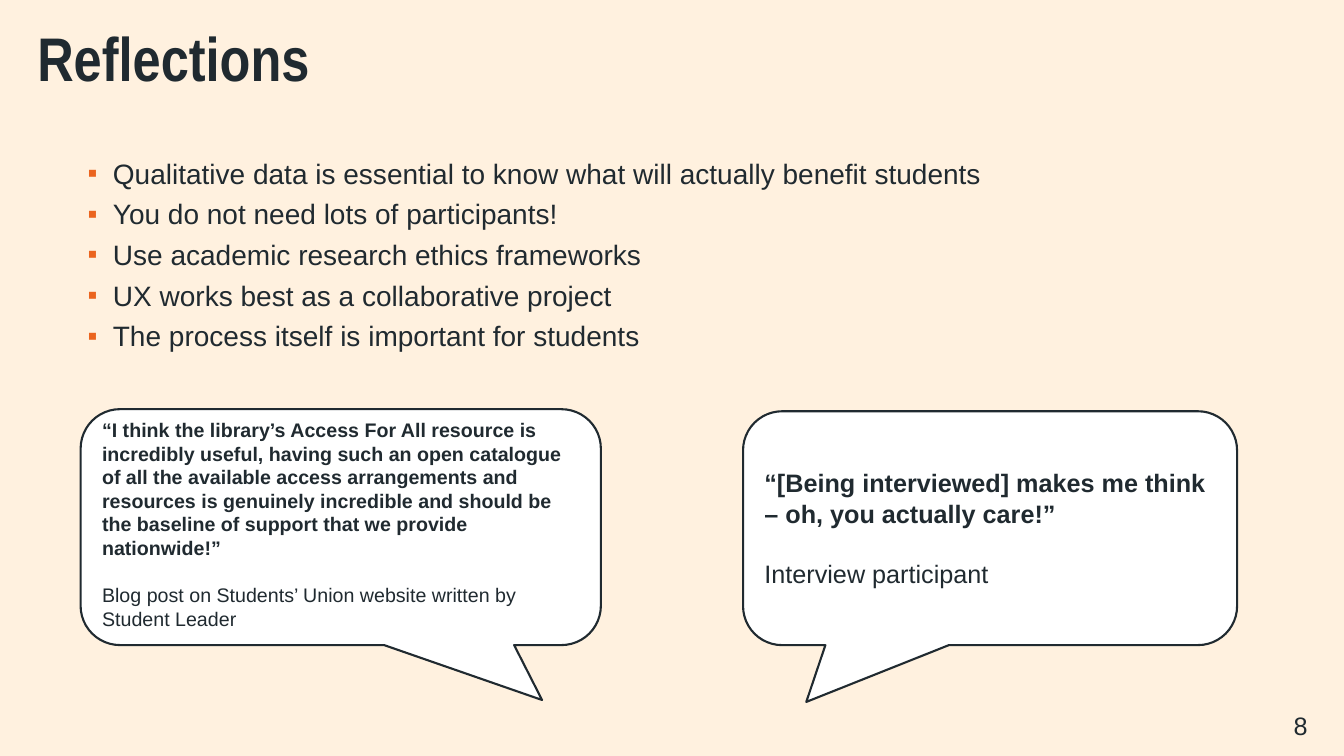
from lxml import etree
from pptx import Presentation
from pptx.dml.color import RGBColor
from pptx.enum.shapes import MSO_SHAPE
from pptx.enum.text import MSO_ANCHOR, PP_ALIGN
from pptx.oxml.ns import qn
from pptx.util import Inches, Pt

CALLOUT = MSO_SHAPE.ROUNDED_RECTANGULAR_CALLOUT
MIDDLE = MSO_ANCHOR.MIDDLE
LEFT, RIGHT = PP_ALIGN.LEFT, PP_ALIGN.RIGHT

CREAM = RGBColor(0xFF, 0xF1, 0xDF)
INK = RGBColor(0x20, 0x2A, 0x30)
WHITE = RGBColor(0xFF, 0xFF, 0xFF)
ORANGE = RGBColor(0xEB, 0x64, 0x1E)

prs = Presentation()
prs.slide_width = Inches(13.33)
prs.slide_height = Inches(7.5)
slide = prs.slides.add_slide(prs.slide_layouts[6])
slide.background.fill.solid()
slide.background.fill.fore_color.rgb = CREAM


def add_frame(left, top, width, height):
    box = slide.shapes.add_textbox(Inches(left), Inches(top), Inches(width), Inches(height))
    frame = box.text_frame
    frame.word_wrap = True
    frame.margin_left = frame.margin_right = frame.margin_top = frame.margin_bottom = 0
    return frame


def add_run(paragraph, text, size, bold=False, font_name="Arial"):
    run = paragraph.add_run()
    run.text = text
    run.font.name = font_name
    run.font.size = Pt(size)
    run.font.bold = bold
    run.font.color.rgb = INK


title = add_frame(0.37, 0.28, 10.71, 1.26).paragraphs[0]
title.line_spacing = 0.9
add_run(title, "Reflections", 44, True, "Arial Narrow")

lessons = [
    "Qualitative data is essential to know what will actually benefit students",
    "You do not need lots of participants!",
    "Use academic research ethics frameworks",
    "UX works best as a collaborative project",
    "The process itself is important for students",
]
lessons_frame = add_frame(0.37, 1.55, 12.6, 2.2)
for index, lesson in enumerate(lessons):
    paragraph = lessons_frame.add_paragraph() if index else lessons_frame.paragraphs[0]
    properties = paragraph._p.get_or_add_pPr()
    properties.set("marL", str(Inches(0.75)))
    properties.set("indent", str(Inches(-0.25)))
    bullet_color = etree.SubElement(properties, qn("a:buClr"))
    etree.SubElement(bullet_color, qn("a:srgbClr"), val=str(ORANGE))
    etree.SubElement(properties, qn("a:buFont"), typeface="Arial")
    etree.SubElement(properties, qn("a:buChar"), char="▪")
    if index:
        paragraph.space_before = Pt(5)
    add_run(paragraph, lesson, 20)

quotes = [
    ((0.8, 4.06, 5.16, 2.34), (0.387, 0.733), 14, 0.06,
     "“I think the library’s Access For All resource is incredibly useful, having such an open "
     "catalogue of all the available access arrangements and resources is genuinely incredible "
     "and should be the baseline of support that we provide nationwide!”",
     "Blog post on Students’ Union website written by Student Leader"),
    ((7.37, 4.08, 4.9, 2.32), (-0.372, 0.743), 18, 0,
     "“[Being interviewed] makes me think – oh, you actually care!”",
     "Interview participant"),
]
for bounds, tip, size, bottom_margin, quote, speaker in quotes:
    bubble = slide.shapes.add_shape(CALLOUT, *[Inches(value) for value in bounds])
    bubble.shadow.inherit = False
    bubble.adjustments[0], bubble.adjustments[1] = tip
    bubble.adjustments[2] = 0.167
    bubble.fill.solid()
    bubble.fill.fore_color.rgb = WHITE
    bubble.line.color.rgb = INK
    bubble.line.width = Pt(1.5)
    frame = bubble.text_frame
    frame.word_wrap = True
    frame.vertical_anchor = MIDDLE
    frame.margin_top = 0
    frame.margin_bottom = Inches(bottom_margin)
    quote_paragraph = frame.paragraphs[0]
    quote_paragraph.alignment = LEFT
    add_run(quote_paragraph, quote, size, True)
    speaker_paragraph = frame.add_paragraph()
    speaker_paragraph.alignment = LEFT
    speaker_paragraph.space_before = Pt(size * 1.2)
    add_run(speaker_paragraph, speaker, size)

page_number = add_frame(9.42, 7.05, 3.55, 0.28).paragraphs[0]
page_number.alignment = RIGHT
add_run(page_number, "8", 18)

prs.save("out.pptx")
